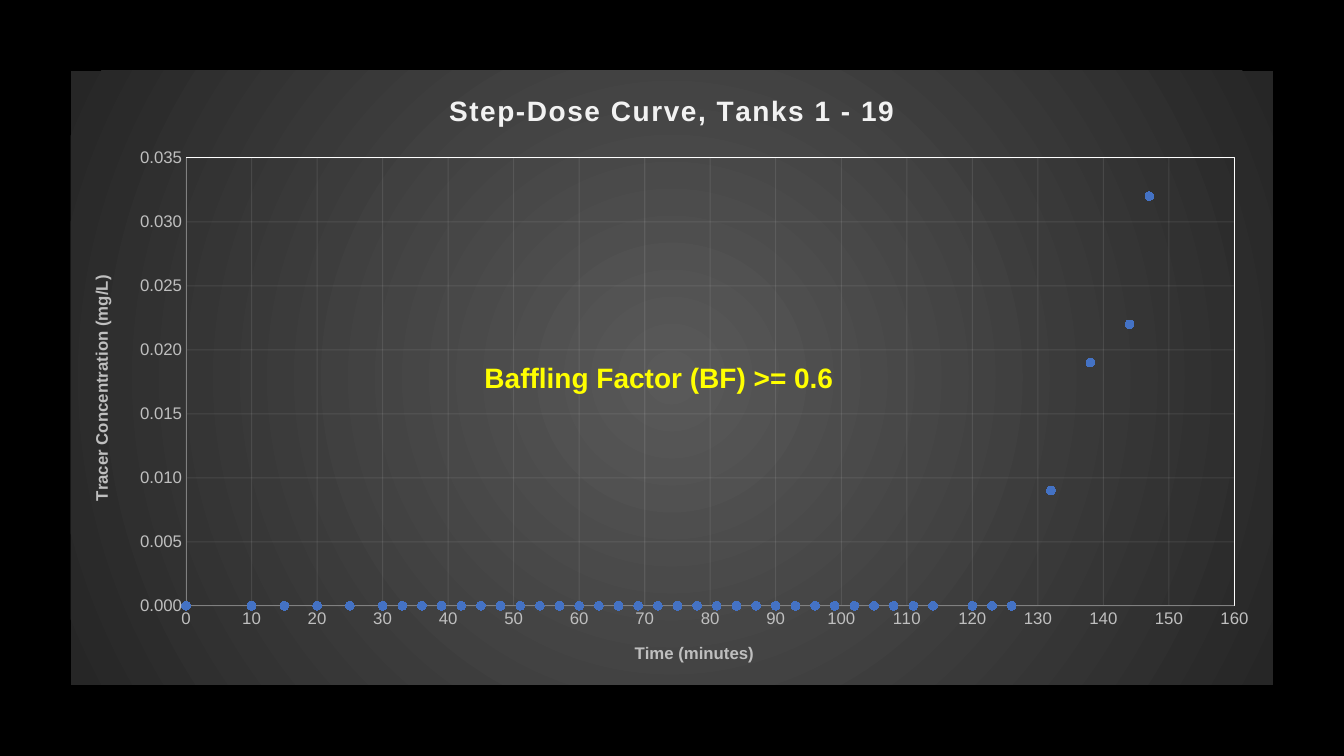
from lxml import etree
from pptx import Presentation
from pptx.chart.data import XyChartData
from pptx.dml.color import RGBColor
from pptx.enum.chart import XL_CHART_TYPE, XL_MARKER_STYLE, XL_TICK_MARK
from pptx.enum.text import MSO_AUTO_SIZE
from pptx.oxml import parse_xml
from pptx.oxml.ns import nsdecls, qn
from pptx.util import Cm, Pt

BLACK = RGBColor(0x00, 0x00, 0x00)
WHITE = RGBColor(0xFF, 0xFF, 0xFF)
PALE = RGBColor(0xF2, 0xF2, 0xF2)
SILVER = RGBColor(0xBF, 0xBF, 0xBF)
GREY = RGBColor(0x80, 0x80, 0x80)
BLUE = RGBColor(0x44, 0x72, 0xC4)
YELLOW = RGBColor(0xFF, 0xFF, 0x00)
SCATTER = XL_CHART_TYPE.XY_SCATTER
CIRCLE = XL_MARKER_STYLE.CIRCLE
NO_TICK = XL_TICK_MARK.NONE
NO_FIT = MSO_AUTO_SIZE.NONE

ZERO_TIMES = [0, 10, 15, 20, 25, *range(30, 115, 3), 120, 123, 126]
TRACER = [(t, 0) for t in ZERO_TIMES] + [
    (132, 0.009), (138, 0.019), (144, 0.022), (147, 0.032)]

CHART_FILL = f"""<c:spPr {nsdecls('c', 'a')}><a:gradFill><a:gsLst>
<a:gs pos="0"><a:srgbClr val="595959"/></a:gs>
<a:gs pos="100000"><a:srgbClr val="262626"/></a:gs></a:gsLst>
<a:path path="circle"><a:fillToRect l="50000" t="50000" r="50000" b="50000"/></a:path>
</a:gradFill><a:ln><a:noFill/></a:ln></c:spPr>"""
PLOT_FRAME = f"""<c:spPr {nsdecls('c', 'a')}><a:noFill/><a:ln w="9525"><a:solidFill>
<a:srgbClr val="{WHITE}"/></a:solidFill></a:ln></c:spPr>"""
PLOT_LAYOUT = f"""<c:layout {nsdecls('c')}><c:manualLayout><c:layoutTarget val="inner"/>
<c:xMode val="edge"/><c:yMode val="edge"/><c:x val="0.096"/><c:y val="0.142"/>
<c:w val="0.872"/><c:h val="0.73"/></c:manualLayout></c:layout>"""


class SlideBuilder:
    """Holds the font and current slide, and adds styled elements to it."""

    def __init__(self, prs, font, background):
        self.font = font
        self.s = prs.slides.add_slide(prs.slide_layouts[6])
        fill = self.s.background.fill
        fill.solid()
        fill.fore_color.rgb = background

    def style(self, font, size, color, bold=False):
        font.name, font.size, font.bold = self.font, Pt(size), bold
        font.color.rgb = color

    def title(self, owner, text, size, color):
        tf = owner.text_frame
        tf.text = text
        p = tf.paragraphs[0]
        self.style(p.font, size, color, True)
        return p

    def axis(self, axis, text, top, step, number_format):
        axis.minimum_scale, axis.maximum_scale, axis.major_unit = 0, top, step
        axis.major_tick_mark = axis.minor_tick_mark = NO_TICK
        self.style(axis.tick_labels.font, 12, SILVER)
        axis.tick_labels.number_format = number_format
        axis.tick_labels.number_format_is_linked = False
        axis.has_major_gridlines = True
        for line, color in ((axis.format.line, GREY),
                            (axis.major_gridlines.format.line, PALE)):
            line.width = Pt(0.75)
            line.color.rgb = color
        grid_color = next(axis.major_gridlines.format.line._ln.iter(qn("a:srgbClr")))
        etree.SubElement(grid_color, qn("a:alpha")).set("val", "10000")
        self.title(axis.axis_title, text, 12, SILVER)

    def scatter(self, left, top, width, height, title, points):
        data = XyChartData()
        series = data.add_series("Series 1")
        for x, y in points:
            series.add_data_point(x, y)
        chart = self.s.shapes.add_chart(SCATTER, left, top, width, height, data).chart
        chart.has_legend = False
        chart.has_title = True
        self.style(chart.font, 10, WHITE)
        p = self.title(chart.chart_title, title, 20, PALE)
        p.font._rPr.set("spc", "100")
        chart.plots[0].vary_by_categories = False
        dots = chart.plots[0].series[0]
        dots.smooth = False
        dots.format.line.fill.background()
        dots.marker.style, dots.marker.size = CIRCLE, 6
        dots.marker.format.fill.solid()
        dots.marker.format.fill.fore_color.rgb = BLUE
        dots.marker.format.line.color.rgb = BLUE
        space = chart._chartSpace
        space.find(qn("c:chart")).addnext(parse_xml(CHART_FILL))
        plot = next(space.iter(qn("c:plotArea")))
        for layout in plot.findall(qn("c:layout")):
            plot.remove(layout)
        plot.insert(0, parse_xml(PLOT_LAYOUT))
        plot.append(parse_xml(PLOT_FRAME))
        return chart

    def text(self, left, top, width, height, text, size, color):
        tf = self.s.shapes.add_textbox(left, top, width, height).text_frame
        tf.auto_size = NO_FIT
        tf.word_wrap = False
        self.title(tf._parent, text, size, color)


def main():
    prs = Presentation()
    prs.slide_width, prs.slide_height = Cm(33.87), Cm(19.05)
    slide = SlideBuilder(prs, "Arial", BLACK)
    chart = slide.scatter(Cm(1.78), Cm(1.78), Cm(30.3), Cm(15.47),
                          "Step-Dose Curve, Tanks 1 - 19", TRACER)
    slide.axis(chart.category_axis, "Time (minutes)", 160, 10, "#,##0")
    slide.axis(chart.value_axis, "Tracer Concentration (mg/L)", 0.035, 0.005, "0.000")
    chart.value_axis.axis_title.text_frame._txBody.bodyPr.set("rot", "-5400000")
    slide.text(Cm(11.96), Cm(8.97), Cm(9.37), Cm(1.12),
               "Baffling Factor (BF) >= 0.6", 20, YELLOW)
    prs.save("out.pptx")


if __name__ == "__main__":
    main()
